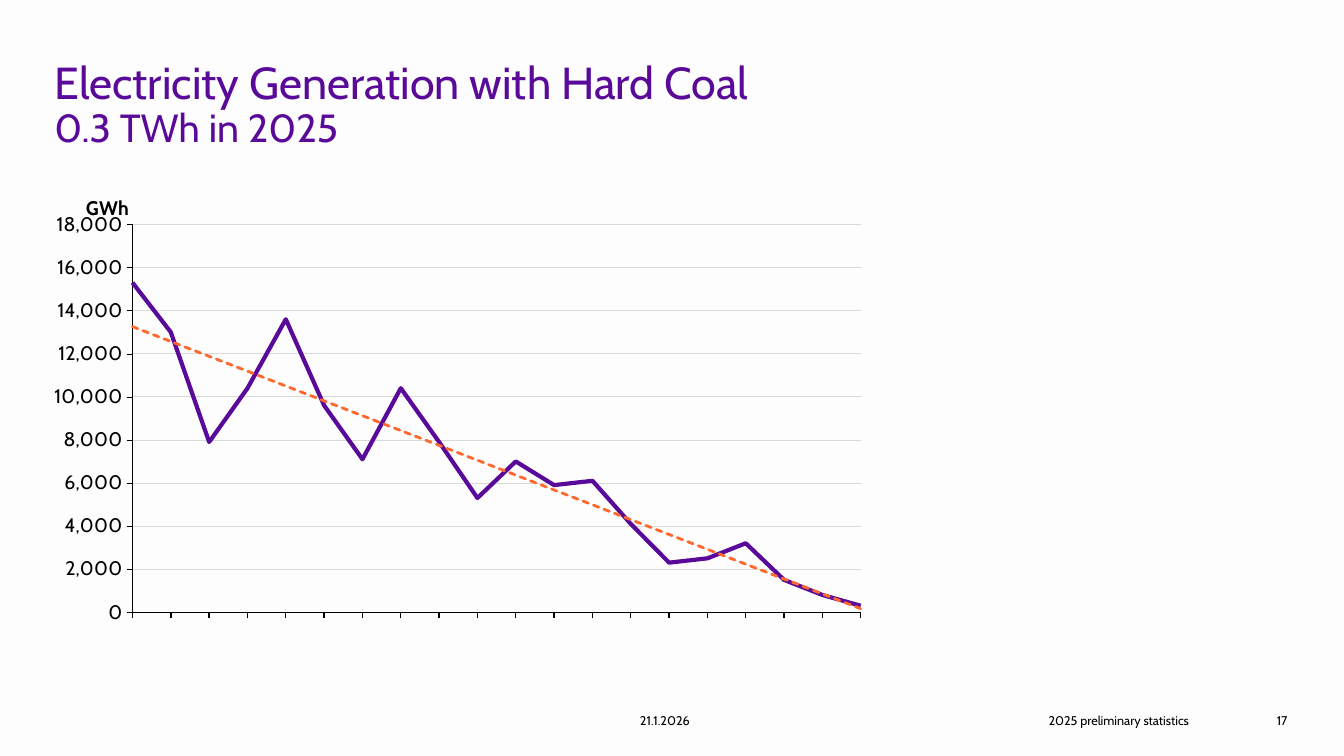
"""Build the slide on electricity generation with hard coal."""
from dataclasses import dataclass

from lxml.etree import SubElement
from pptx import Presentation
from pptx.chart.data import CategoryChartData
from pptx.dml.color import RGBColor
from pptx.enum.chart import XL_CHART_TYPE, XL_MARKER_STYLE, XL_TICK_MARK
from pptx.enum.text import MSO_ANCHOR, PP_ALIGN
from pptx.oxml import parse_xml
from pptx.oxml.ns import nsdecls, qn
from pptx.util import Inches, Pt


@dataclass(frozen=True)
class Theme:
    font: str = "Cabin"
    background: str = "FEFDFD"
    accent: str = "590A99"
    trend: str = "FF692E"
    ink: str = "000000"
    grid: str = "D9D9D9"
    heading_size: int = 32
    subheading_size: int = 28
    axis_size: int = 14
    footer_size: int = 9


class SlideBuilder:
    COLUMNS = ROWS = 100

    def __init__(self, presentation, theme):
        self.theme = theme
        self.column = presentation.slide_width / self.COLUMNS
        self.row = presentation.slide_height / self.ROWS
        self.slide = presentation.slides.add_slide(presentation.slide_layouts[6])
        backdrop = self.slide.background.fill
        backdrop.solid()
        backdrop.fore_color.rgb = RGBColor.from_string(theme.background)

    def place(self, left, top, width, height):
        return (round(left * self.column), round(top * self.row),
                round(width * self.column), round(height * self.row))

    def style(self, font, size, color):
        font.name = self.theme.font
        font.size = Pt(size)
        font.color.rgb = RGBColor.from_string(color)

    def stroke(self, line, color, width):
        line.color.rgb = RGBColor.from_string(color)
        line.width = Pt(width)

    def frame(self, area, left_inset, right_inset, anchor):
        frame = self.slide.shapes.add_textbox(*self.place(*area)).text_frame
        frame.word_wrap = True
        frame.vertical_anchor = anchor
        frame.margin_left, frame.margin_right = Inches(left_inset), Inches(right_inset)
        return frame

    def heading(self, area, headline, summary):
        paragraph = self.frame(area, 0, 0.1, MSO_ANCHOR.TOP).paragraphs[0]
        paragraph.line_spacing = 0.9
        self.style(paragraph.font, self.theme.heading_size, self.theme.accent)
        paragraph.add_run().text = headline
        paragraph.add_line_break()
        second_line = paragraph.add_run()
        second_line.text = summary
        second_line.font.size = Pt(self.theme.subheading_size)

    def footer(self, left, width, text, align, left_inset=0.1):
        area = (left, 92.67, width, 5.33)
        paragraph = self.frame(area, left_inset, 0, MSO_ANCHOR.MIDDLE).paragraphs[0]
        paragraph.text = text
        paragraph.alignment = align
        self.style(paragraph.font, self.theme.footer_size, self.theme.ink)

    def set_layout(self, parent, **settings):
        layout = parent.find(qn("c:layout"))
        if layout is None:
            layout = parse_xml(f"<c:layout {nsdecls('c')}/>")
            parent.insert(0, layout)
        manual = SubElement(layout, qn("c:manualLayout"))
        for name, value in settings.items():
            SubElement(manual, qn(f"c:{name}")).set("val", str(value))

    def axis(self, axis, width):
        axis.major_tick_mark = XL_TICK_MARK.OUTSIDE
        axis.minor_tick_mark = XL_TICK_MARK.NONE
        self.style(axis.tick_labels.font, self.theme.axis_size, self.theme.ink)
        self.stroke(axis.format.line, self.theme.ink, width)

    def start_on_axis(self, axis):
        for crossing in axis._element.findall(qn("c:crossBetween")):
            axis._element.remove(crossing)
        axis._element.find(qn("c:crosses")).addnext(
            parse_xml(f'<c:crossBetween {nsdecls("c")} val="midCat"/>'))

    def trend_line(self, series):
        trend = parse_xml(
            f'<c:trendline {nsdecls("c", "a")}><c:spPr><a:ln w="{Pt(2)}" cap="rnd">'
            f'<a:solidFill><a:srgbClr val="{self.theme.trend}"/></a:solidFill>'
            '<a:prstDash val="sysDash"/></a:ln></c:spPr><c:trendlineType val="linear"/>'
            '<c:dispRSqr val="0"/><c:dispEq val="0"/></c:trendline>')
        series._element.find(qn("c:cat")).addprevious(trend)

    def line_chart(self, area, years, output, unit):
        data = CategoryChartData(number_format="#,##0")
        data.categories = years
        data.add_series("Series 1", output)
        chart = self.slide.shapes.add_chart(
            XL_CHART_TYPE.LINE, *self.place(*area), data).chart
        chart.has_legend = False
        chart.has_title = False
        self.style(chart.font, self.theme.axis_size, self.theme.ink)
        self.set_layout(chart._chartSpace.chart.plotArea, layoutTarget="inner",
                        xMode="edge", yMode="edge", x=0.09, y=0.09, w=0.87, h=0.81)

        year_axis, output_axis = chart.category_axis, chart.value_axis
        self.axis(year_axis, 1)
        labels = year_axis._element.find(qn("c:txPr"))
        labels.find(qn("a:bodyPr")).set("rot", "-5400000")

        self.axis(output_axis, 0.25)
        output_axis.minimum_scale, output_axis.maximum_scale = 0, 18000
        output_axis.major_unit = 2000
        output_axis.tick_labels.number_format = "#,##0"
        output_axis.tick_labels.number_format_is_linked = False
        output_axis.has_major_gridlines = True
        self.stroke(output_axis.major_gridlines.format.line, self.theme.grid, 0.5)
        self.start_on_axis(output_axis)

        unit_frame = output_axis.axis_title.text_frame
        unit_frame.text = unit
        unit_font = unit_frame.paragraphs[0].font
        self.style(unit_font, self.theme.axis_size, self.theme.ink)
        unit_font.bold = True
        unit_frame._txBody.find(qn("a:bodyPr")).set("rot", "0")
        self.set_layout(output_axis._element.find(qn("c:title")),
                        xMode="edge", yMode="edge", x=0.03, y=0.02)

        generation = chart.plots[0].series[0]
        generation.smooth = False
        generation.marker.style = XL_MARKER_STYLE.NONE
        self.stroke(generation.format.line, self.theme.accent, 3)
        self.trend_line(generation)


def main():
    presentation = Presentation()
    presentation.slide_width, presentation.slide_height = Inches(13.33), Inches(7.5)
    builder = SlideBuilder(presentation, Theme())
    builder.heading((4.05, 7.33, 91.75, 14.53),
                    "Electricity Generation with Hard Coal", "0.3 TWh in 2025")
    builder.line_chart(
        (4.05, 24, 62.49, 63.33),
        [str(year) for year in range(2006, 2026)],
        [15300, 13000, 7900, 10400, 13600, 9600, 7100, 10400, 7900, 5300,
         7000, 5900, 6100, 4100, 2300, 2500, 3200, 1500, 800, 300],
        "GWh")
    builder.footer(45.31, 8.33, "21.1.2026", PP_ALIGN.CENTER, left_inset=0)
    builder.footer(55.44, 33.01, "2025 preliminary statistics", PP_ALIGN.RIGHT)
    builder.footer(90.17, 5.63, "17", PP_ALIGN.RIGHT)
    presentation.save("out.pptx")


if __name__ == "__main__":
    main()
